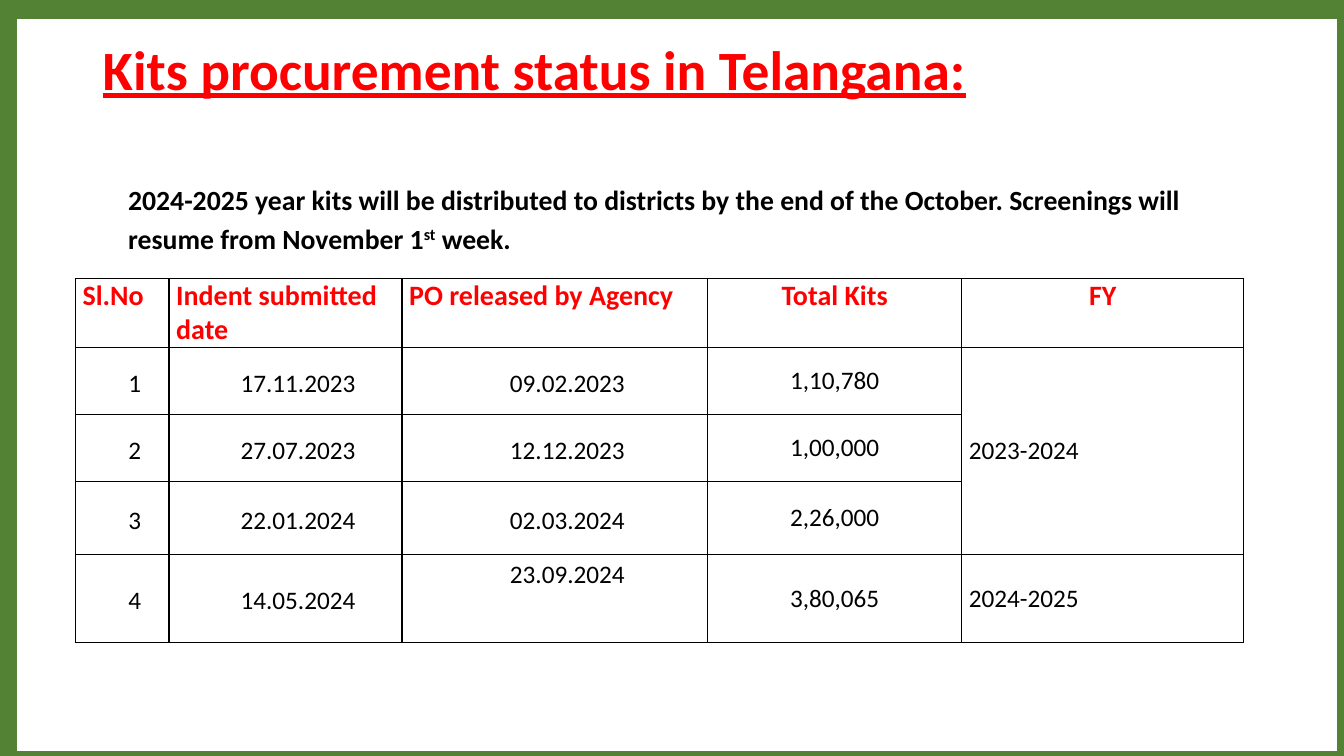
from lxml import etree
from pptx import Presentation
from pptx import util as u
from pptx.dml.color import RGBColor
from pptx.enum import shapes, text
from pptx.oxml.ns import qn

RED, BLACK, GREEN = "FF0000", "000000", "548235"
FONT = "Calibri"
LEFT, CENTER = text.PP_ALIGN.LEFT, text.PP_ALIGN.CENTER
TOP, MIDDLE = text.MSO_ANCHOR.TOP, text.MSO_ANCHOR.MIDDLE

HEADERS = ["Sl.No", "Indent submitted date", "PO released by Agency", "Total Kits", "FY"]
ROWS = [
    ["1", "17.11.2023", "09.02.2023", "1,10,780", "2023-2024"],
    ["2", "27.07.2023", "12.12.2023", "1,00,000", ""],
    ["3", "22.01.2024", "02.03.2024", "2,26,000", ""],
    ["4", "14.05.2024", "23.09.2024", "3,80,065", "2024-2025"],
]
COL_WIDTHS = [2.36, 5.87, 7.7, 6.4, 7.11]
ROW_HEIGHTS = [1.74, 1.69, 1.69, 1.84, 2.21]


def color(value):
    return RGBColor.from_string(value)


def add_text(p, content, size=18, fill=BLACK, bold=False, underline=False, baseline=None):
    r = p.add_run()
    r.text = content
    r.font.name = FONT
    r.font.size = u.Pt(size)
    r.font.bold = bold
    r.font.underline = underline
    r.font.color.rgb = color(fill)
    if baseline:
        r.font._element.set("baseline", str(baseline * 1000))


def hang(p):
    """Hanging indent with loose lines."""
    p.line_spacing = 1.15
    pPr = p._p.get_or_add_pPr()
    pPr.set("marL", str(u.Cm(1.27)))
    pPr.set("indent", str(-u.Cm(0.64)))


def set_borders(cell):
    tcPr = cell._tc.get_or_add_tcPr()
    for i, side in enumerate(("lnL", "lnR", "lnT", "lnB")):
        ln = etree.Element(qn(f"a:{side}"), w=str(u.Pt(1)))
        fill = etree.SubElement(ln, qn("a:solidFill"))
        etree.SubElement(fill, qn("a:srgbClr"), val=BLACK)
        tcPr.insert(i, ln)


def add_heading(slide, left, top, width, height):
    tf = slide.shapes.add_textbox(left, top, width, height).text_frame
    tf.word_wrap = True
    tf.vertical_anchor = MIDDLE
    # Title
    p = tf.paragraphs[0]
    p.line_spacing = 1.15
    p.space_after = u.Pt(55)
    add_text(p, "Kits procurement status in Telangana:", size=39.6, fill=RED,
             bold=True, underline=True)
    # Note on distribution
    p = tf.add_paragraph()
    p.line_spacing = 1.15
    p._p.get_or_add_pPr().set("marL", str(u.Cm(0.64)))
    note = dict(size=19.8, bold=True)
    add_text(p, "2024-2025 year kits will be distributed to districts by the end of "
                "the October. Screenings will resume from November 1", **note)
    add_text(p, "st", baseline=30, **note)
    add_text(p, " week.", **note)


def fill_cell(cell, content, row, col):
    cell.margin_left = cell.margin_right = u.Cm(0.18)
    cell.margin_top = cell.margin_bottom = 0
    cell.fill.background()
    set_borders(cell)
    p = cell.text_frame.paragraphs[0]
    if row == 0:
        p.alignment = CENTER if col > 2 else LEFT
        add_text(p, content, size=20, fill=RED, bold=True)
        return
    # The latest release date sits at the top of its cell
    cell.vertical_anchor = TOP if (row, col) == (4, 2) else MIDDLE
    p.alignment = LEFT if col == 4 else CENTER
    if col < 3:
        hang(p)
    if content:
        add_text(p, content)


def add_kits_table(slide, left, top, width, height):
    data = [HEADERS] + ROWS
    table = slide.shapes.add_table(len(data), len(HEADERS), left, top, width, height).table
    table.first_row = table.horz_banding = False
    for column, share in zip(table.columns, COL_WIDTHS):
        column.width = int(width * share / sum(COL_WIDTHS))
    for line, share in zip(table.rows, ROW_HEIGHTS):
        line.height = int(height * share / sum(ROW_HEIGHTS))
    for row, values in enumerate(data):
        for col, content in enumerate(values):
            fill_cell(table.cell(row, col), content, row, col)
    # First financial year covers three rows
    table.cell(1, 4).merge(table.cell(3, 4))


def add_frame(slide, left, top, width, height):
    sp = slide.shapes.add_shape(shapes.MSO_SHAPE.RECTANGLE, left, top, width, height)
    sp.shadow.inherit = False
    sp.fill.background()
    sp.line.color.rgb = color(GREEN)
    sp.line.width = u.Pt(17)


def main():
    prs = Presentation()
    prs.slide_width, prs.slide_height = u.Cm(33.87), u.Cm(19.05)
    slide = prs.slides.add_slide(prs.slide_layouts[6])
    add_heading(slide, u.Cm(2.34), u.Cm(1.02), u.Cm(29.21), u.Cm(5))
    add_kits_table(slide, u.Cm(1.9), u.Cm(7.02), u.Cm(29.45), u.Cm(9.17))
    add_frame(slide, u.Cm(0.13), u.Cm(0.18), prs.slide_width, prs.slide_height)
    prs.save("out.pptx")


if __name__ == "__main__":
    main()
